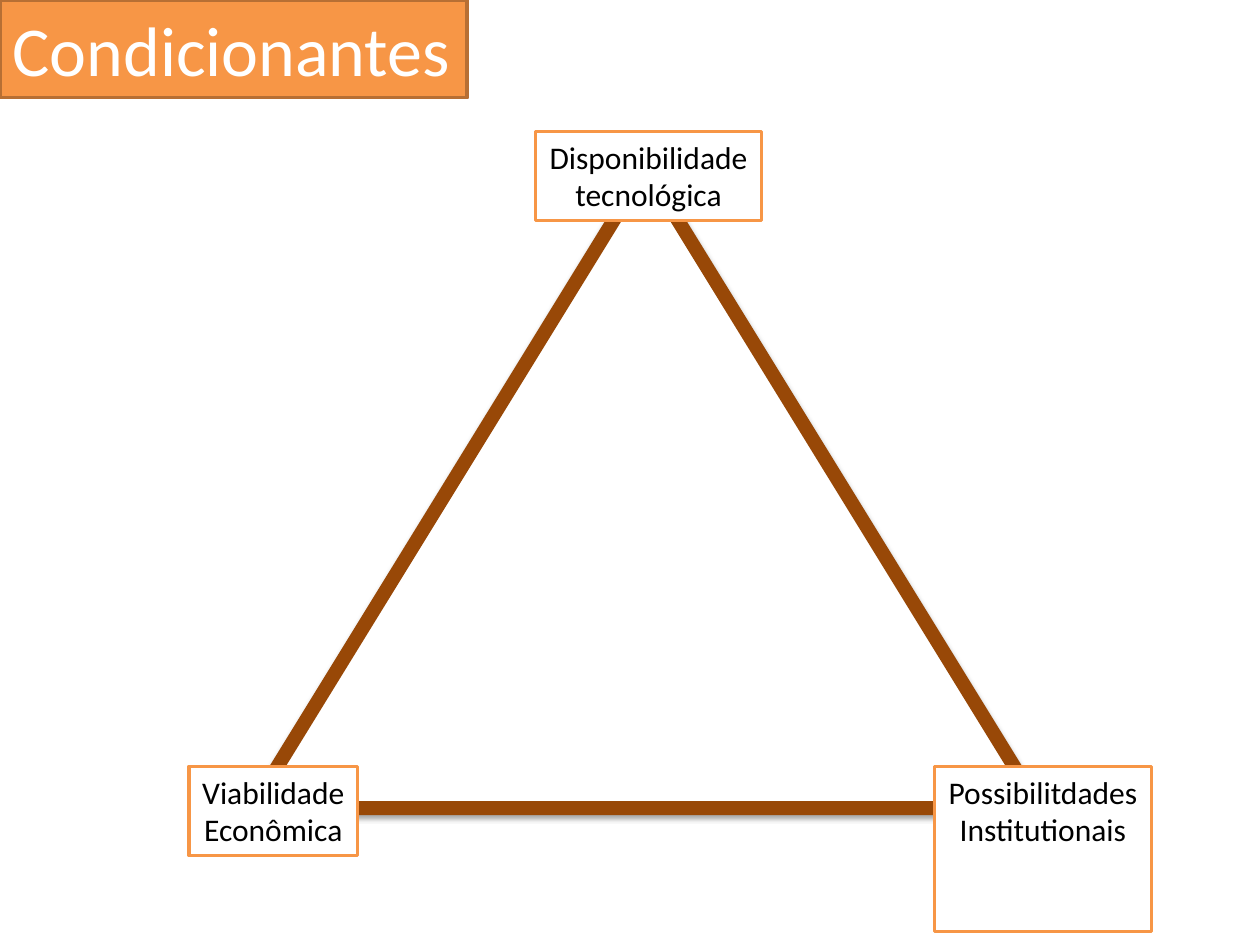
"""Build a slide with a triangle linking three conditioning factors."""
from dataclasses import dataclass

from lxml.etree import SubElement
from pptx import Presentation
from pptx.dml.color import RGBColor
from pptx.enum.shapes import MSO_SHAPE
from pptx.enum.text import MSO_ANCHOR, MSO_AUTO_SIZE, PP_ALIGN
from pptx.oxml.ns import qn
from pptx.util import Cm, Pt


@dataclass(frozen=True)
class Theme:
    font: str = "Calibri"
    white: RGBColor = RGBColor(0xFF, 0xFF, 0xFF)
    black: RGBColor = RGBColor(0, 0, 0)
    orange: RGBColor = RGBColor(0xF7, 0x96, 0x46)
    dark_orange: RGBColor = RGBColor(0xB7, 0x6F, 0x34)
    brown: RGBColor = RGBColor(0x98, 0x48, 0x07)
    title_size: Pt = Pt(40)
    label_size: Pt = Pt(18)
    border: Pt = Pt(2)
    triangle_border: Pt = Pt(8)


theme = Theme()


def paint(shape, fill, line, width):
    shape.fill.solid()
    shape.fill.fore_color.rgb = fill
    shape.line.color.rgb = line
    shape.line.width = width


def format_text(frame, size, color, alignment):
    frame.vertical_anchor = MSO_ANCHOR.TOP
    frame.auto_size = MSO_AUTO_SIZE.NONE
    for para in frame.paragraphs:
        para.alignment = alignment
        for span in para.runs:
            span.font.name = theme.font
            span.font.size = size
            span.font.color.rgb = color


deck = Presentation()
deck.slide_width, deck.slide_height = Cm(25.4), Cm(19.05)
page = deck.slides.add_slide(deck.slide_layouts.get_by_name("Title Only"))

title = page.shapes.title
title.left, title.top, title.width, title.height = Cm(0), Cm(0), Cm(9.42), Cm(1.97)
paint(title, theme.orange, theme.dark_orange, theme.border)
title.text_frame.text = "Condicionantes"
title.text_frame.word_wrap = False
format_text(title.text_frame, theme.title_size, theme.white, PP_ALIGN.LEFT)

triangle = page.shapes.add_shape(
    MSO_SHAPE.ISOSCELES_TRIANGLE, Cm(5.08), Cm(3.39), Cm(15.88), Cm(12.9))
paint(triangle, theme.white, theme.brown, theme.triangle_border)
triangle.shadow.inherit = False
effects = triangle.element.spPr.find(qn("a:effectLst"))
shadow = SubElement(effects, qn("a:outerShdw"), blurRad=str(Pt(3.1)),
                    dist=str(Pt(1.8)), dir="5400000", rotWithShape="0")
shadow_color = SubElement(shadow, qn("a:srgbClr"), val=str(theme.black))
SubElement(shadow_color, qn("a:alpha"), val="35000")

factors = [
    ("Disponibilidade\ntecnológica", 10.8, 2.65, 4.55, 1.8, False),
    ("Viabilidade\nEconômica", 3.81, 15.45, 3.4, 1.8, False),
    ("Possibilitdades Institutionais", 18.84, 15.45, 4.37, 3.33, True),
]
corners = page.shapes.add_group_shape()
for text, left, top, width, height, wraps in factors:
    box = corners.shapes.add_textbox(Cm(left), Cm(top), Cm(width), Cm(height))
    paint(box, theme.white, theme.orange, theme.border)
    box.text_frame.text = text
    box.text_frame.word_wrap = wraps
    format_text(box.text_frame, theme.label_size, theme.black, PP_ALIGN.CENTER)

deck.save("out.pptx")
